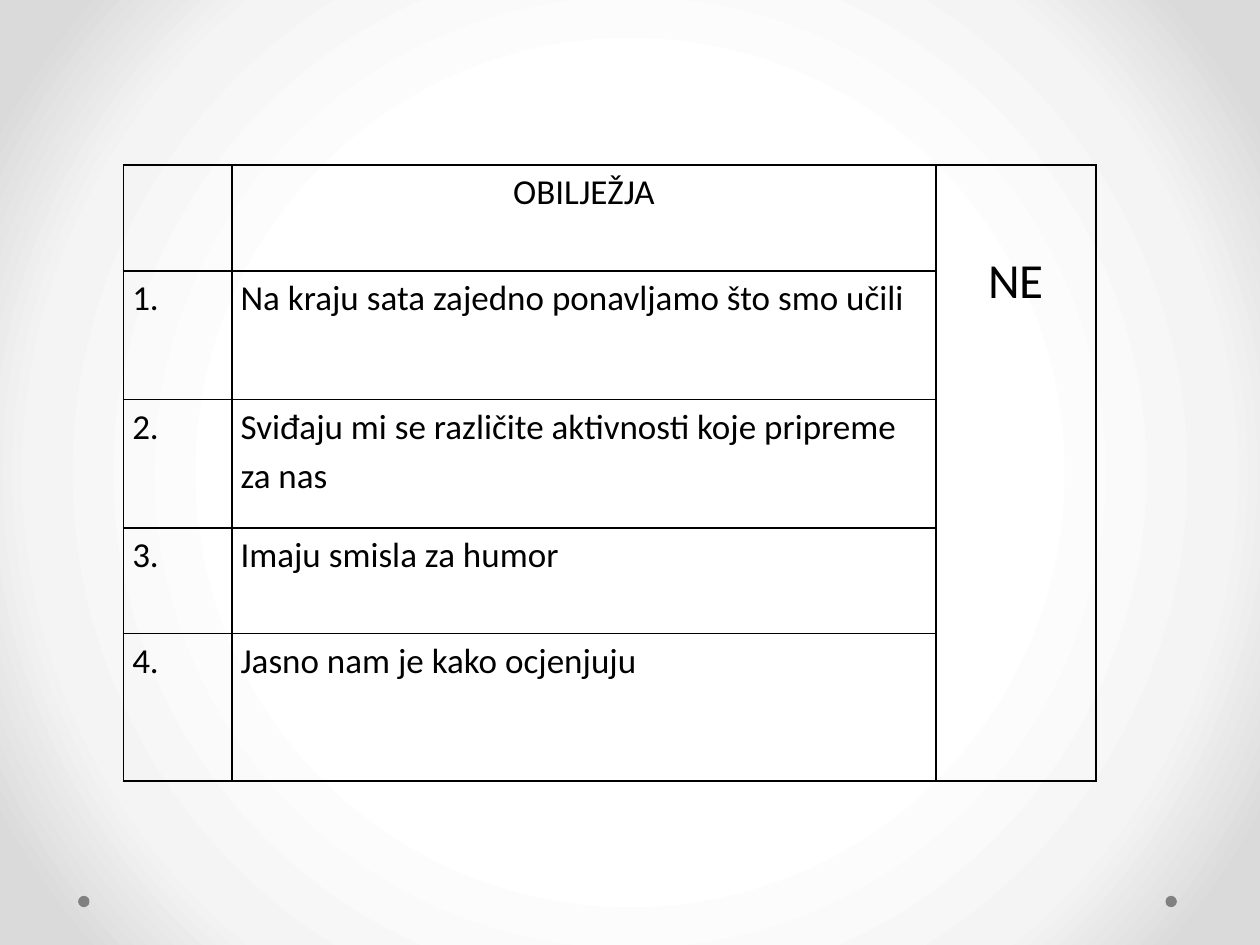
import dataclasses

import pptx
import pptx.dml.color
import pptx.enum.shapes
import pptx.enum.text
import pptx.oxml
import pptx.oxml.ns
import pptx.util

Inches = pptx.util.Inches
Pt = pptx.util.Pt
RGB = pptx.dml.color.RGBColor
Align = pptx.enum.text.PP_ALIGN
NS = pptx.oxml.ns.nsdecls("a")


@dataclasses.dataclass(frozen=True)
class Theme:
    font: str = "Calibri"
    ink: str = "000000"
    dot: str = "808080"
    glow: tuple = ((50, "FFFFFF"), (76, "F4F4F4"), (92, "DADADA"))
    body: int = 20
    answer: int = 28
    spacing: float = 1.15
    border: int = 1


THEME = Theme()


@dataclasses.dataclass(frozen=True)
class Entry:
    row: int
    col: int
    text: str
    size: int = THEME.body
    align: Align = Align.LEFT
    top: float = 0


TRAITS = (
    "Na kraju sata zajedno ponavljamo što smo učili",
    "Sviđaju mi se različite aktivnosti koje pripreme za nas",
    "Imaju smisla za humor",
    "Jasno nam je kako ocjenjuju",
)
WIDTHS = (0.86, 5.59, 1.27)
HEIGHTS = (0.84, 1.02, 1.02, 0.84, 1.17)


def paint_glow(slide) -> None:
    """Give the slide a round gradient that spreads from its centre."""
    slide.background.fill.gradient()
    grad = slide.element.find(".//" + pptx.oxml.ns.qn("a:gradFill"))
    for child in list(grad):
        grad.remove(child)
    stops = "".join(
        f'<a:gs pos="{pos * 1000}"><a:srgbClr val="{tone}"/></a:gs>'
        for pos, tone in THEME.glow
    )
    grad.append(pptx.oxml.parse_xml(f"<a:gsLst {NS}>{stops}</a:gsLst>"))
    grad.append(pptx.oxml.parse_xml(
        f'<a:path {NS} path="circle">'
        '<a:fillToRect l="50000" t="50000" r="50000" b="50000"/></a:path>'
    ))


def add_dot(slide, left: float) -> None:
    dot = slide.shapes.add_shape(
        pptx.enum.shapes.MSO_SHAPE.OVAL,
        Inches(left), Inches(7.11), Inches(0.09), Inches(0.09),
    )
    dot.shadow.inherit = False
    dot.fill.solid()
    dot.fill.fore_color.rgb = RGB.from_string(THEME.dot)
    dot.line.fill.background()


def style_cell(cell) -> None:
    """Clear the fill, set the margins and draw all four borders."""
    cell.margin_left = cell.margin_right = Inches(0.07)
    cell.margin_top = cell.margin_bottom = 0
    props = cell._tc.get_or_add_tcPr()
    for side in ("lnL", "lnR", "lnT", "lnB"):
        props.append(pptx.oxml.parse_xml(
            f'<a:{side} {NS} w="{Pt(THEME.border)}"><a:solidFill>'
            f'<a:srgbClr val="{THEME.ink}"/></a:solidFill></a:{side}>'
        ))
    cell.fill.background()


def write_cell(cell, entry: Entry) -> None:
    cell.text = entry.text
    cell.margin_top = Inches(entry.top)
    line = cell.text_frame.paragraphs[0]
    line.alignment = entry.align
    line.line_spacing = THEME.spacing
    line.font.name = THEME.font
    line.font.size = Pt(entry.size)
    line.font.color.rgb = RGB.from_string(THEME.ink)


def add_grid(slide) -> None:
    frame = slide.shapes.add_table(
        len(HEIGHTS), len(WIDTHS), Inches(0.98), Inches(1.31),
        Inches(sum(WIDTHS)), Inches(sum(HEIGHTS)),
    )
    table = frame.table
    table.first_row = table.horz_banding = False
    for col, width in zip(table.columns, WIDTHS):
        col.width = Inches(width)
    for row, height in zip(table.rows, HEIGHTS):
        row.height = Inches(height)
    for cell in table.iter_cells():
        style_cell(cell)
    table.cell(0, 2).merge(table.cell(len(HEIGHTS) - 1, 2))

    entries = [
        Entry(0, 1, "OBILJEŽJA", align=Align.CENTER),
        Entry(0, 2, "NE", THEME.answer, Align.CENTER, top=0.62),
    ]
    for num, trait in enumerate(TRAITS, 1):
        entries += [Entry(num, 0, f"{num}."), Entry(num, 1, trait)]
    for entry in entries:
        write_cell(table.cell(entry.row, entry.col), entry)


def main() -> None:
    deck = pptx.Presentation()
    deck.slide_width, deck.slide_height = Inches(10), Inches(7.5)
    slide = deck.slides.add_slide(deck.slide_layouts[6])
    paint_glow(slide)
    for left in (9.25, 0.62):
        add_dot(slide, left)
    add_grid(slide)
    deck.save("out.pptx")


if __name__ == "__main__":
    main()
